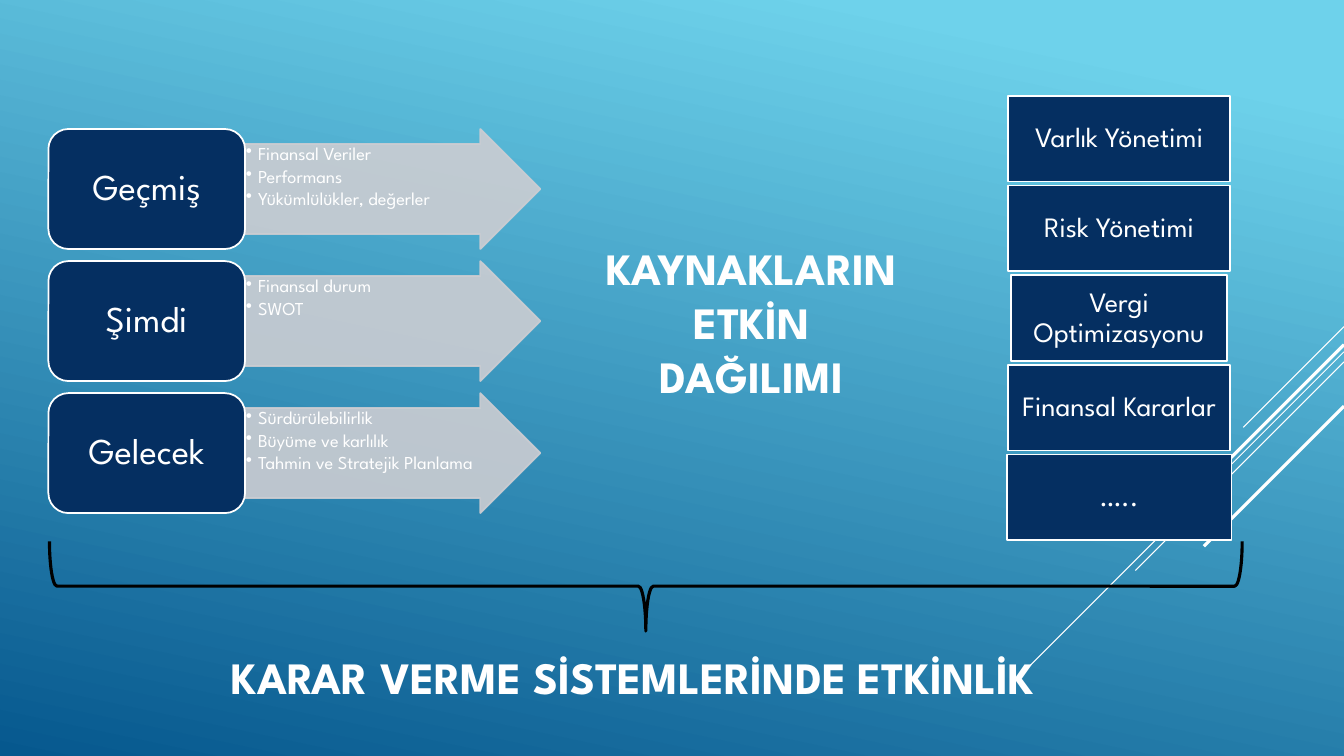
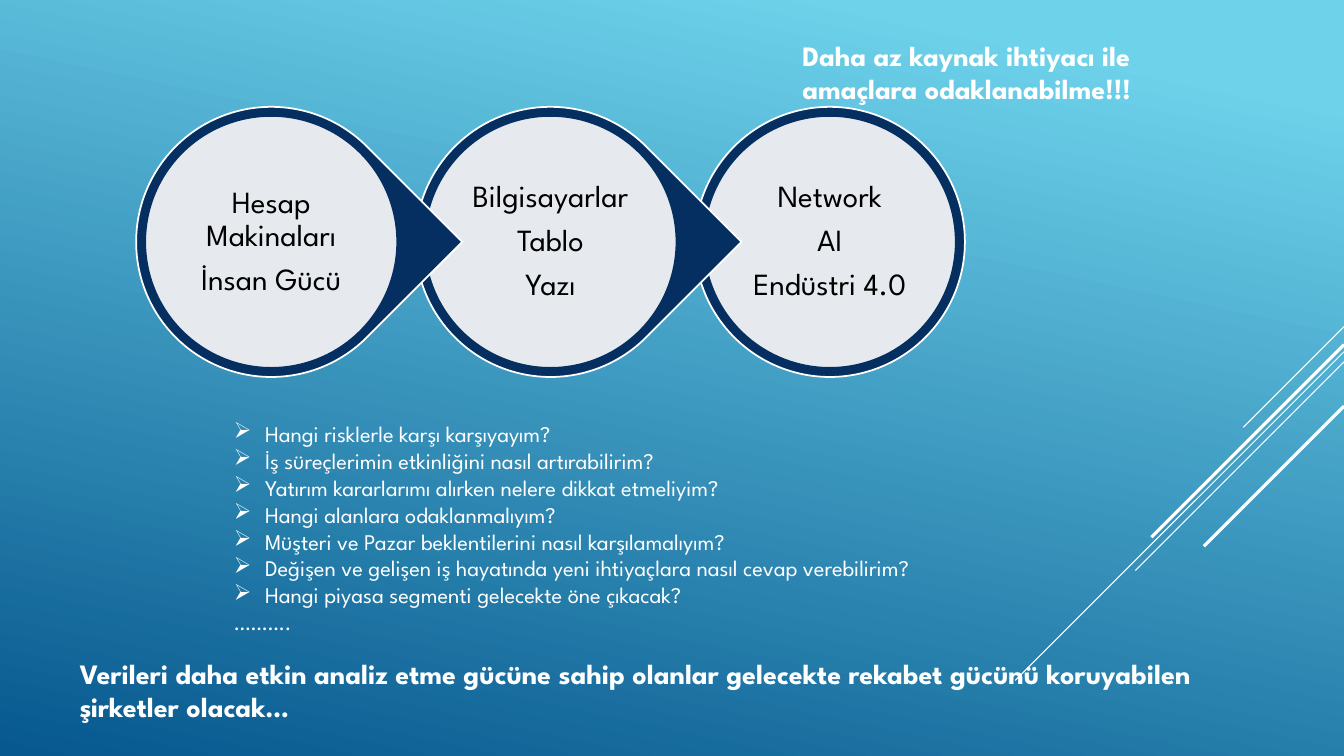
"""Build two slides on effective decision making and the tools behind it."""
from dataclasses import dataclass
from typing import Optional, Sequence

from lxml.etree import SubElement
from pptx import Presentation
from pptx.dml.color import RGBColor
from pptx.enum.shapes import MSO_CONNECTOR, MSO_SHAPE as Preset
from pptx.enum.text import MSO_ANCHOR as Anchor, PP_ALIGN as Align
from pptx.oxml.ns import qn
from pptx.util import Inches, Pt

FONT = "League Spartan"
NAVY = RGBColor(0x05, 0x2F, 0x61)
SILVER = RGBColor(0xCC, 0xCD, 0xD2)
WHITE = RGBColor(0xFF, 0xFF, 0xFF)
BLACK = RGBColor(0x00, 0x00, 0x00)
SKY = RGBColor(0x6E, 0xD2, 0xEB)
OCEAN = RGBColor(0x06, 0x58, 0x8E)
SLIDE_WIDTH, SLIDE_HEIGHT = 13.33, 7.5


@dataclass(frozen=True)
class Streak:
    """A diagonal line that runs down and left from the right edge."""
    top: float
    reach: float
    weight: float


@dataclass(frozen=True)
class Period:
    """A time period and the inputs it gives."""
    name: str
    inputs: Sequence[str]


@dataclass(frozen=True)
class Tile:
    """A result tile in the right-hand stack."""
    label: str
    width: float = 2.2


@dataclass(frozen=True)
class Bullet:
    """A paragraph marker with its hanging indent in inches."""
    symbol: str
    indent: float


STREAKS = (
    Streak(3.24, 1.0, 0.75),
    Streak(3.49, 3.26, 0.75),
    Streak(3.59, 2.07, 0.75),
    Streak(3.42, 1.91, 2.25),
    Streak(4.03, 1.39, 2.25),
)
PERIODS = (
    Period("Geçmiş", ("Finansal Veriler", "Performans", "Yükümlülükler, değerler")),
    Period("Şimdi", ("Finansal durum", "SWOT")),
    Period("Gelecek", ("Sürdürülebilirlik", "Büyüme ve karlılık", "Tahmin ve Stratejik Planlama")),
)
TILES = (
    Tile("Varlık Yönetimi"),
    Tile("Risk Yönetimi"),
    Tile("Vergi Optimizasyonu", 2.14),
    Tile("Finansal Kararlar"),
    Tile("…..", 2.23),
)
STAGES = (
    ("Hesap Makinaları", "İnsan Gücü"),
    ("Bilgisayarlar", "Tablo", "Yazı"),
    ("Network", "AI", "Endüstri 4.0"),
)
QUESTIONS = (
    "Hangi risklerle karşı karşıyayım?",
    "İş süreçlerimin etkinliğini nasıl artırabilirim?",
    "Yatırım kararlarımı alırken nelere dikkat etmeliyim?",
    "Hangi alanlara odaklanmalıyım?",
    "Müşteri ve Pazar beklentilerini nasıl karşılamalıyım?",
    "Değişen ve gelişen iş hayatında yeni ihtiyaçlara nasıl cevap verebilirim?",
    "Hangi piyasa segmenti gelecekte öne çıkacak?",
)


def write(box, lines: Sequence[str], *, size: float, color: RGBColor = WHITE,
          bold: bool = False, align: Align = Align.LEFT, anchor: Anchor = Anchor.TOP,
          inset: tuple[float, float] = (0.1, 0.05), line_spacing: float = 1.0,
          space_after: float = 0, bullet: Optional[Bullet] = None) -> None:
    """Append formatted paragraphs to a shape; space_after is a share of the size."""
    frame = box.text_frame
    frame.word_wrap = True
    frame.vertical_anchor = anchor
    frame.margin_left = frame.margin_right = Inches(inset[0])
    frame.margin_top = frame.margin_bottom = Inches(inset[1])
    for line in lines:
        para = frame.add_paragraph() if frame.text else frame.paragraphs[0]
        para.alignment = align
        para.line_spacing = line_spacing
        para.space_after = Pt(size * space_after)
        if bullet:
            properties = para._p.get_or_add_pPr()
            properties.set("marL", str(Inches(bullet.indent)))
            properties.set("indent", str(-Inches(bullet.indent)))
            SubElement(properties, qn("a:buChar")).set("char", bullet.symbol)
        span = para.add_run()
        span.text = line
        span.font.name = FONT
        span.font.size = Pt(size)
        span.font.bold = bold
        span.font.color.rgb = color


def set_opacity(fill_parent, percent: int) -> None:
    """Give every solid colour below an element the same opacity."""
    for color in fill_parent.iter(qn("a:srgbClr")):
        SubElement(color, qn("a:alpha")).set("val", str(percent * 1000))


def add_box(page, preset: Preset, left: float, top: float, width: float, height: float, *,
            fill: Optional[RGBColor] = NAVY, line: RGBColor = WHITE, weight: float = 1.25,
            rotation: float = 0):
    """Draw a preset shape without a shadow."""
    box = page.shapes.add_shape(preset, Inches(left), Inches(top), Inches(width), Inches(height))
    box.shadow.inherit = False
    box.rotation = rotation
    if fill is None:
        box.fill.background()
    else:
        box.fill.solid()
        box.fill.fore_color.rgb = fill
    box.line.color.rgb = line
    box.line.width = Pt(weight)
    return box


def add_label(page, left: float, top: float, width: float, height: float):
    """Add an empty text box."""
    return page.shapes.add_textbox(Inches(left), Inches(top), Inches(width), Inches(height))


def paint_background(deck) -> None:
    """Set the shared gradient on the slide master."""
    fill = deck.slide_master.background.fill
    fill.gradient()
    fill.gradient_angle = 258
    for stop, position, color in zip(fill.gradient_stops, (0.1, 1.0), (SKY, OCEAN)):
        stop.position = position
        stop.color.rgb = color


def add_page(deck):
    """Add a blank page with the shared diagonal streaks."""
    page = deck.slides.add_slide(deck.slide_layouts[6])
    for streak in STREAKS:
        line = page.shapes.add_connector(
            MSO_CONNECTOR.STRAIGHT, Inches(SLIDE_WIDTH), Inches(streak.top),
            Inches(SLIDE_WIDTH - streak.reach), Inches(streak.top + streak.reach))
        line.line.color.rgb = WHITE
        line.line.width = Pt(streak.weight)
        SubElement(line._element.spPr, qn("a:effectLst"))
    return page


def add_period(page, period: Period, top: float) -> None:
    """Draw a period card and the arrow that lists its inputs."""
    height = 1.19
    arrow = add_box(page, Preset.RIGHT_ARROW, 2.43, top, 2.93, height, fill=SILVER, line=SILVER)
    arrow.adjustments[0] = 0.75
    set_opacity(arrow._element.spPr, 90)
    write(arrow, period.inputs, size=13, inset=(0.01, 0.01), line_spacing=0.9,
          space_after=0.15, bullet=Bullet("•", 0.12))
    card = add_box(page, Preset.ROUNDED_RECTANGLE, 0.48, top, 1.95, height)
    write(card, [period.name], size=26, align=Align.CENTER, anchor=Anchor.MIDDLE,
          line_spacing=0.9, space_after=0.35)


def add_stage(page, lines: Sequence[str], left: float, is_last: bool) -> None:
    """Draw a ringed circle, pointed to the right unless it is the last."""
    top, outer, ring = 1.06, 2.68, 0.09
    inner = outer - 2 * ring
    if is_last:
        add_box(page, Preset.OVAL, left, top, outer, outer)
    else:
        add_box(page, Preset.TEAR, left, top, outer, outer, rotation=45)
    disc = add_box(page, Preset.OVAL, left + ring, top + ring, inner, inner, fill=WHITE, line=NAVY)
    set_opacity(disc._element.spPr.find(qn("a:solidFill")), 90)
    write(disc, lines, size=22, color=BLACK, align=Align.CENTER, anchor=Anchor.MIDDLE,
          inset=(0.03, 0.03), line_spacing=0.9, space_after=0.35)


def build_decision_page(deck) -> None:
    """Show how past, present and future inputs lead to results."""
    page = add_page(deck)
    for row, period in enumerate(PERIODS):
        add_period(page, period, 1.28 + row * 1.31)
    write(add_label(page, 5.83, 2.34, 3.25, 1.72), ["KAYNAKLARIN ETKİN DAĞILIMI"],
          size=32, bold=True, align=Align.CENTER)
    for row, tile in enumerate(TILES):
        box = add_box(page, Preset.RECTANGLE, 11.1 - tile.width / 2, 0.95 + row * 0.89,
                      tile.width, 0.85)
        write(box, [tile.label], size=20, align=Align.CENTER, anchor=Anchor.MIDDLE,
              inset=(0.06, 0.06), line_spacing=0.9, space_after=0.35)
    add_box(page, Preset.RIGHT_BRACE, 5.96, -0.1, 0.89, 11.83, fill=None, line=BLACK,
            weight=2.25, rotation=90)
    write(add_label(page, 1.63, 6.4, 9.31, 0.64), ["KARAR VERME SİSTEMLERİNDE ETKİNLİK"],
          size=32, bold=True, align=Align.CENTER)


def build_tools_page(deck) -> None:
    """Show the stages of tools and the questions they help answer."""
    page = add_page(deck)
    last = len(STAGES) - 1
    for index in reversed(range(len(STAGES))):
        add_stage(page, STAGES[index], 1.35 + index * 2.77, index == last)
    write(add_label(page, 7.86, 0.33, 4.2, 0.77),
          ["Daha az kaynak ihtiyacı ile amaçlara odaklanabilme!!!"], size=20, bold=True)
    questions = add_label(page, 2.22, 4.12, 9.98, 2.32)
    write(questions, QUESTIONS, size=16, bullet=Bullet("➢", 0.31))
    write(questions, ["………."], size=16)
    write(add_label(page, 0.69, 6.46, 11.29, 0.77),
          ["Verileri daha etkin analiz etme gücüne sahip olanlar gelecekte rekabet gücünü "
           "koruyabilen şirketler olacak…"], size=20, bold=True)


def main() -> None:
    """Build and save the deck."""
    deck = Presentation()
    deck.slide_width = Inches(SLIDE_WIDTH)
    deck.slide_height = Inches(SLIDE_HEIGHT)
    paint_background(deck)
    build_decision_page(deck)
    build_tools_page(deck)
    deck.save("out.pptx")


if __name__ == "__main__":
    main()
